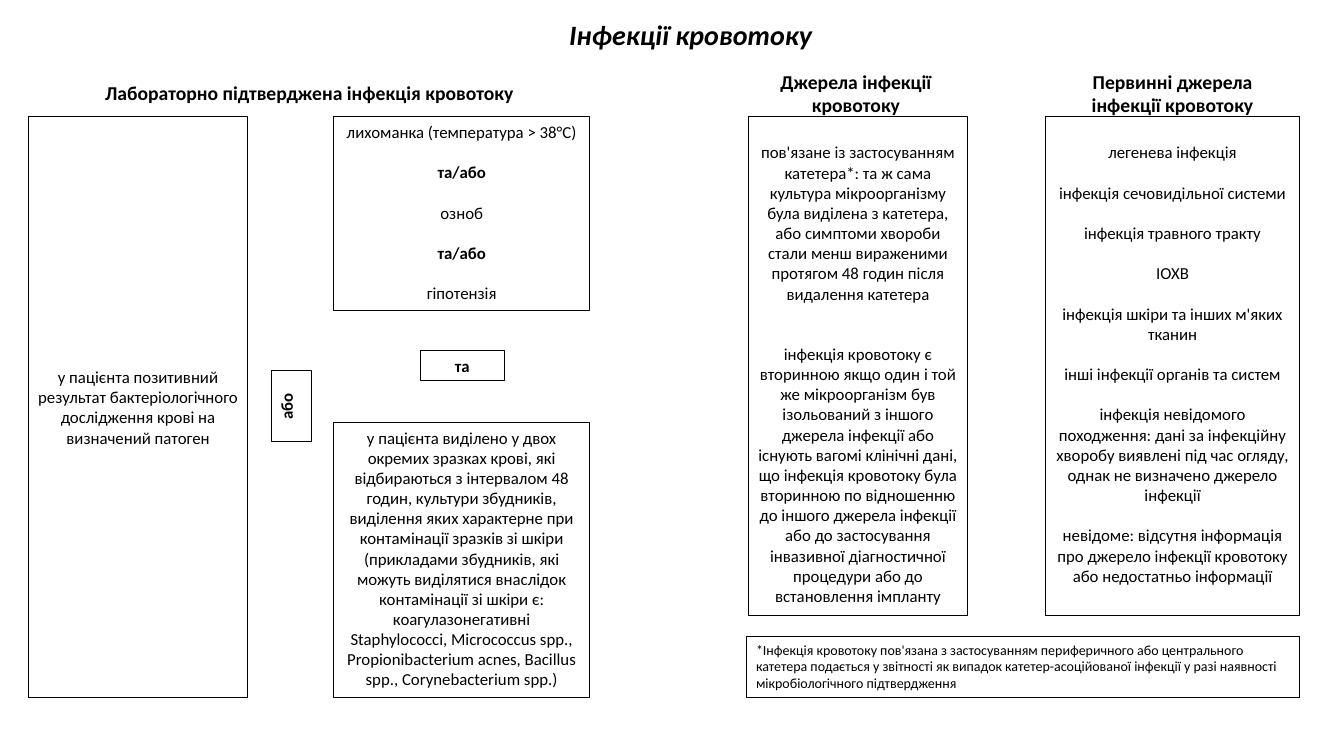
from dataclasses import dataclass

from pptx import Presentation
from pptx.dml.color import RGBColor
from pptx.enum.shapes import MSO_SHAPE
from pptx.enum.text import MSO_ANCHOR, PP_ALIGN
from pptx.util import Inches, Pt

RECTANGLE = MSO_SHAPE.RECTANGLE
TOP, MIDDLE = MSO_ANCHOR.TOP, MSO_ANCHOR.MIDDLE
LEFT, CENTER = PP_ALIGN.LEFT, PP_ALIGN.CENTER

FONT = "Calibri"
BLACK = "000000"
LINE = 0.2  # height of one 12 pt text line, inches
INSET = 0.05
AND_OR = "та/або"

# Shared edges of the diagram, inches
BOX_TOP = 1.16
BOTTOM = 6.92
SOURCE_HEIGHT = 4.95
NARROW = 2.18
CRITERIA_LEFT, CRITERIA_WIDTH = 3.31, 2.54


@dataclass
class Heading:
    text: str
    left: float
    top: float
    width: float
    height: float
    size: int = 14
    italic: bool = False


@dataclass
class Box:
    paragraphs: list[str]
    left: float
    top: float
    width: float
    height: float
    size: int = 12
    bold: tuple[str, ...] = ()
    gap: float = LINE
    top_inset: float = INSET
    align: PP_ALIGN = CENTER
    anchor: MSO_ANCHOR = TOP
    upward: bool = False


HEADINGS = [
    Heading("Інфекції кровотоку", 1.87, 0.12, 9.96, 0.44, size=20, italic=True),
    Heading("Лабораторно підтверджена інфекція кровотоку", 0.28, 0.75, 5.58, 0.34),
    Heading("Джерела інфекції кровотоку", 7.4, 0.64, NARROW, 0.57),
    Heading("Первинні джерела інфекції кровотоку", 10.54, 0.64, NARROW, 0.57),
]

BOXES = [
    # Laboratory-confirmed infection
    Box(["у пацієнта позитивний результат бактеріологічного дослідження крові "
         "на визначений патоген"],
        0.28, BOX_TOP, NARROW, BOTTOM - BOX_TOP, anchor=MIDDLE),
    Box(["або"], 2.69, 3.68, 0.4, 0.7, bold=("або",), upward=True),
    Box(["лихоманка (температура > 38°С)", AND_OR, "озноб", AND_OR, "гіпотензія"],
        CRITERIA_LEFT, BOX_TOP, CRITERIA_WIDTH, 1.92, bold=(AND_OR,)),
    Box(["та"], 4.17, 3.48, 0.83, 0.3, bold=("та",)),
    Box(["у пацієнта виділено у двох окремих зразках крові, які відбираються з "
         "інтервалом 48 годин, культури збудників, виділення яких характерне при "
         "контамінації зразків зі шкіри (прикладами збудників, які можуть виділятися "
         "внаслідок контамінації зі шкіри є: коагулазонегативні Staphylococci, "
         "Micrococcus spp., Propionibacterium acnes, Bacillus spp., "
         "Corynebacterium spp.)"],
        CRITERIA_LEFT, 4.19, CRITERIA_WIDTH, BOTTOM - 4.19),
    # Sources of infection
    Box(["пов'язане із застосуванням катетера*: та ж сама культура мікроорганізму "
         "була виділена з катетера, або симптоми хвороби стали менш вираженими "
         "протягом 48 годин після видалення катетера",
         "інфекція кровотоку є вторинною якщо один і той же мікроорганізм був "
         "ізольований з іншого джерела інфекції або існують вагомі клінічні дані, "
         "що інфекція кровотоку була вторинною по відношенню до іншого джерела "
         "інфекції або до застосування інвазивної діагностичної процедури або до "
         "встановлення імпланту"],
        7.42, BOX_TOP, NARROW, SOURCE_HEIGHT, gap=2 * LINE, top_inset=INSET + LINE),
    # Primary sources
    Box(["легенева інфекція",
         "інфекція сечовидільної системи",
         "інфекція травного тракту",
         "ІОХВ",
         "інфекція шкіри та інших м'яких тканин",
         "інші інфекції органів та систем",
         "інфекція невідомого походження: дані за інфекційну хворобу виявлені під "
         "час огляду, однак не визначено джерело інфекції",
         "невідоме: відсутня інформація про джерело інфекції кровотоку або "
         "недостатньо інформації"],
        10.37, BOX_TOP, 2.52, SOURCE_HEIGHT, top_inset=INSET + LINE),
    # Footnote
    Box(["*Інфекція кровотоку пов'язана з застосуванням периферичного або "
         "центрального катетера подається у звітності як випадок "
         "катетер-асоційованої інфекції у разі наявності мікробіологічного "
         "підтвердження"],
        7.4, 6.31, 5.49, BOTTOM - 6.31, size=10, align=LEFT),
]


def color(value: str) -> RGBColor:
    return RGBColor.from_string(value)


def style_span(span, size: int, bold: bool, italic: bool = False) -> None:
    span.font.name = FONT
    span.font.size = Pt(size)
    span.font.bold = bold
    span.font.italic = italic
    span.font.color.rgb = color(BLACK)


def draw_heading(page, heading: Heading) -> None:
    shape = page.shapes.add_textbox(Inches(heading.left), Inches(heading.top),
                                    Inches(heading.width), Inches(heading.height))
    frame = shape.text_frame
    frame.word_wrap = True
    frame.text = heading.text
    para = frame.paragraphs[0]
    para.alignment = CENTER
    style_span(para.runs[0], heading.size, True, heading.italic)


def draw_box(page, box: Box) -> None:
    shape = page.shapes.add_shape(RECTANGLE, Inches(box.left), Inches(box.top),
                                  Inches(box.width), Inches(box.height))
    shape.shadow.inherit = False
    shape.fill.background()
    shape.line.color.rgb = color(BLACK)
    shape.line.width = Pt(0.75)

    frame = shape.text_frame
    frame.word_wrap = True
    frame.vertical_anchor = box.anchor
    frame.margin_top = Inches(box.top_inset)
    frame.text = "\n".join(box.paragraphs)
    for index, para in enumerate(frame.paragraphs):
        para.alignment = box.align
        if index:
            para.space_before = Inches(box.gap)
        style_span(para.runs[0], box.size, para.text in box.bold)
    if box.upward:
        shape.element.txBody.bodyPr.set("vert", "vert270")


def main() -> None:
    deck = Presentation()
    deck.slide_width, deck.slide_height = Inches(13.33), Inches(7.5)
    page = deck.slides.add_slide(deck.slide_layouts[6])
    for box in BOXES:
        draw_box(page, box)
    for heading in HEADINGS:
        draw_heading(page, heading)
    deck.save("out.pptx")


if __name__ == "__main__":
    main()
